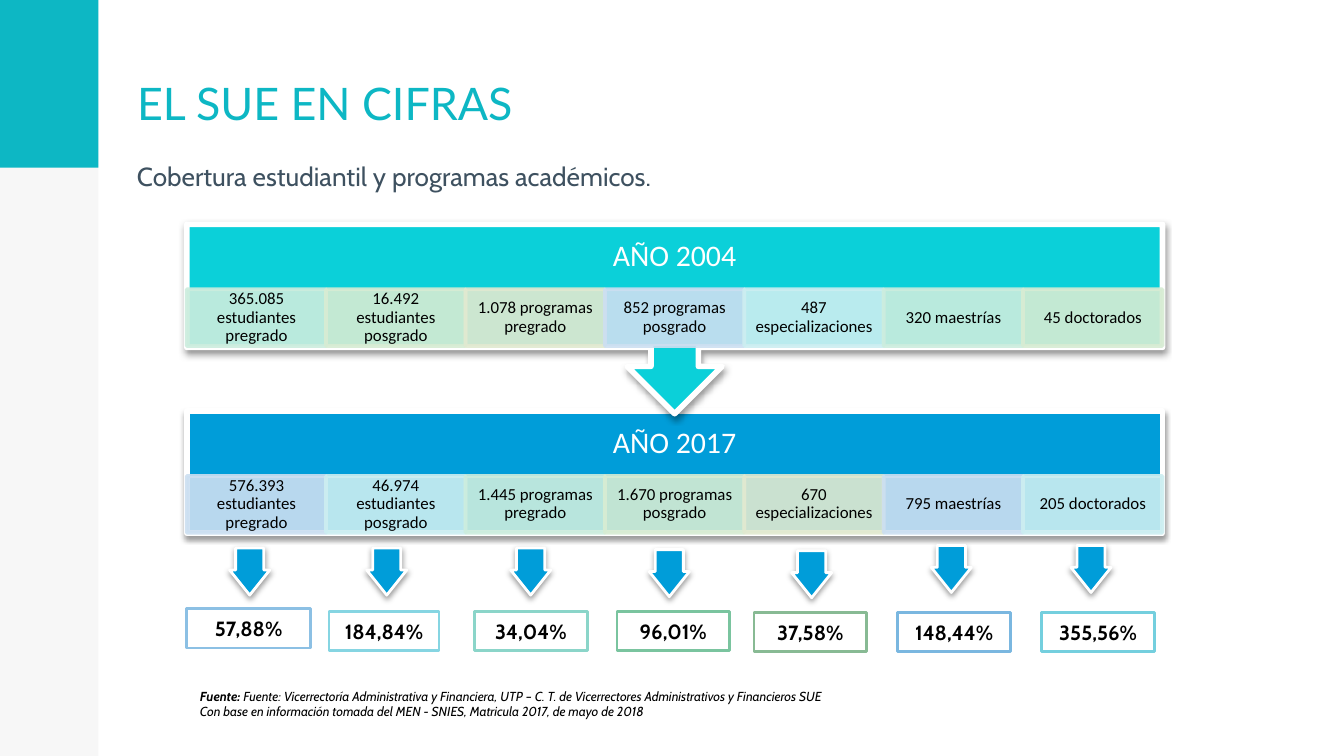
from pptx import Presentation
from pptx import util as u
from pptx.dml import color
from pptx.enum import shapes, text
from pptx.oxml import ns
from lxml import etree

RGB = color.RGBColor
TEAL = RGB(0x0D, 0xB7, 0xC4)
AQUA = RGB(0x0B, 0xD0, 0xD9)
BLUE = RGB(0x00, 0x9D, 0xD9)
SLATE = RGB(0x3E, 0x51, 0x60)
PALE_GREY = RGB(0xF7, 0xF7, 0xF7)
WHITE = RGB(0xFF, 0xFF, 0xFF)
BLACK = RGB(0x00, 0x00, 0x00)
SKY = RGB(0xCC, 0xDF, 0xF1)
ICE = RGB(0xCC, 0xEE, 0xF1)
MINT = RGB(0xCC, 0xED, 0xDE)
LEAF = RGB(0xD7, 0xEC, 0xD3)
OLIVE = RGB(0xE1, 0xE9, 0xD0)

KIND = shapes.MSO_SHAPE
ALIGN = text.PP_ALIGN
ANCHOR = text.MSO_ANCHOR

CELLS_2004 = [
    ("365.085 estudiantes pregrado", MINT),
    ("16.492 estudiantes posgrado", LEAF),
    ("1.078 programas pregrado", OLIVE),
    ("852 programas posgrado", SKY),
    ("487 especializaciones", ICE),
    ("320 maestrías", MINT),
    ("45 doctorados", LEAF),
]
CELLS_2017 = [
    ("576.393 estudiantes pregrado", SKY),
    ("46.974 estudiantes posgrado", ICE),
    ("1.445 programas pregrado", MINT),
    ("1.670 programas posgrado", LEAF),
    ("670 especializaciones", OLIVE),
    ("795 maestrías", SKY),
    ("205 doctorados", ICE),
]
GROWTH = [
    ("57,88%", RGB(0x8C, 0xC0, 0xE4), (3.53, 11.51, 2.34), (4.34, 10.36)),
    ("184,84%", RGB(0x86, 0xD5, 0xE2), (6.22, 11.56, 2.08), (6.93, 10.36)),
    ("34,04%", RGB(0x8B, 0xD5, 0xC9), (8.97, 11.56, 2.13), (9.65, 10.36)),
    ("96,01%", RGB(0x7A, 0xC4, 0x9F), (11.66, 11.56, 2.13), (12.27, 10.39)),
    ("37,58%", RGB(0x88, 0xBA, 0x94), (14.25, 11.58, 2.13), (14.96, 10.41)),
    ("148,44%", RGB(0x7A, 0xB7, 0xE0), (16.97, 11.58, 2.13), (17.6, 10.31)),
    ("355,56%", RGB(0x74, 0xCF, 0xDE), (19.69, 11.58, 2.13), (20.24, 10.31)),
]


def lengths(box):
    return [u.Cm(value) for value in box]


def add_span(para, words, font, size, colour, bold=False, italic=False):
    span = para.add_run()
    span.text = words
    span.font.name = font
    span.font.size = u.Pt(size)
    span.font.color.rgb = colour
    span.font.bold = bold
    span.font.italic = italic


def set_frame(shape, side, edge, anchor):
    frame = shape.text_frame
    frame.word_wrap = True
    frame.auto_size = text.MSO_AUTO_SIZE.NONE
    frame.margin_left = frame.margin_right = u.Cm(side)
    frame.margin_top = frame.margin_bottom = u.Cm(edge)
    frame.vertical_anchor = anchor
    return frame


def add_text_box(page, box, side=0.25, edge=0.13, anchor=ANCHOR.TOP):
    return set_frame(page.shapes.add_textbox(*lengths(box)), side, edge, anchor)


def add_block(page, kind, box, fill=None, line=None, weight=1.5):
    block = page.shapes.add_shape(kind, *lengths(box))
    block.shadow.inherit = False
    if fill is None:
        block.fill.background()
    else:
        block.fill.solid()
        block.fill.fore_color.rgb = fill
    if line is None:
        block.line.fill.background()
    else:
        block.line.color.rgb = line
        block.line.width = u.Pt(weight)
    return block


def add_shadow(block):
    effects = block.element.spPr.find(ns.qn("a:effectLst"))
    shadow = etree.SubElement(
        effects, ns.qn("a:outerShdw"), blurRad=str(u.Pt(3.1)),
        dist=str(u.Pt(1.6)), dir="5400000", rotWithShape="0")
    tint = etree.SubElement(shadow, ns.qn("a:srgbClr"), val=str(BLACK))
    etree.SubElement(tint, ns.qn("a:alpha"), val="38000")


def make_translucent(block, percent):
    for tint in block.element.spPr.iter(ns.qn("a:srgbClr")):
        etree.SubElement(tint, ns.qn("a:alpha"), val=str(percent * 1000))


def add_sidebar(page, box):
    left, top, width, height = box
    add_block(page, KIND.RECTANGLE, box, PALE_GREY)
    add_block(page, KIND.RECTANGLE, (left, top, width, 3.17), TEAL)


def add_headings(page, box):
    left, top, width, height = box
    title = page.shapes.title
    title.left, title.top, title.width, title.height = lengths((left, top, width, 2.67))
    para = set_frame(title, 0.25, 0.25, ANCHOR.BOTTOM).paragraphs[0]
    para.alignment = ALIGN.LEFT
    add_span(para, "EL SUE EN CIFRAS", "Lato", 24, TEAL)
    para = add_text_box(page, (left, top + 2.87, width, height - 2.87)).paragraphs[0]
    para.alignment = ALIGN.JUSTIFY
    add_span(para, "Cobertura estudiantil y programas académicos.", "Cabin", 14, SLATE)


def add_year(page, box, kind, colour, heading, cells):
    left, top, width, height = box
    panel = add_block(page, kind, box, colour, WHITE, 3)
    add_shadow(panel)
    if kind == KIND.UP_ARROW_CALLOUT:
        panel.rotation = 180
    para = add_text_box(page, (left, top, width, 1.24), 0.3, 0.3, ANCHOR.MIDDLE).paragraphs[0]
    para.alignment = ALIGN.CENTER
    para.line_spacing = 0.9
    add_span(para, heading, "Calibri", 16, WHITE)
    step = width / len(cells)
    for index, (words, tint) in enumerate(cells):
        cell = add_block(page, KIND.RECTANGLE,
                         (left + index * step, top + 1.23, step, 1.07), tint, tint, 2)
        make_translucent(cell, 90)
        para = set_frame(cell, 0.18, 0.03, ANCHOR.MIDDLE).paragraphs[0]
        para.alignment = ALIGN.CENTER
        para.line_spacing = 0.9
        add_span(para, words, "Calibri", 9, BLACK)


def add_growth(page, box, arrow_place, words, colour):
    arrow = add_block(page, KIND.DOWN_ARROW, (*arrow_place, 0.76, 0.89), BLUE, WHITE)
    arrow.adjustments[0] = 0.7
    arrow.adjustments[1] = 0.625
    add_shadow(arrow)
    frame = add_block(page, KIND.RECTANGLE, box, line=colour)
    para = set_frame(frame, 0.1, 0, ANCHOR.MIDDLE).paragraphs[0]
    para.alignment = ALIGN.CENTER
    add_span(para, words, "Cabin", 11, BLACK, bold=True)


def add_source(page, box):
    frame = add_text_box(page, box)
    para = frame.paragraphs[0]
    add_span(para, "Fuente: ", "Cabin", 7, BLACK, bold=True, italic=True)
    add_span(para, "Fuente: Vicerrectoría Administrativa y Financiera, UTP – C. T. de "
             "Vicerrectores Administrativos y Financieros SUE", "Cabin", 7, BLACK, italic=True)
    add_span(frame.add_paragraph(), "Con base en información tomada del MEN - SNIES, "
             "Matricula 2017, de mayo de 2018", "Cabin", 7, BLACK, italic=True)


def main():
    deck = Presentation()
    deck.slide_width, deck.slide_height = lengths((25.4, 14.29))
    page = deck.slides.add_slide(deck.slide_layouts.get_by_name("Title Only"))
    add_sidebar(page, (0, 0, 1.86, 14.29))
    add_headings(page, (2.34, 0.03, 12.6, 3.73))
    add_year(page, (3.53, 7.77, 18.44, 2.31), KIND.RECTANGLE, BLUE, "AÑO 2017", CELLS_2017)
    add_year(page, (3.53, 4.24, 18.44, 3.58), KIND.UP_ARROW_CALLOUT, AQUA,
             "AÑO 2004", CELLS_2004)
    for words, colour, place, arrow_place in GROWTH:
        add_growth(page, (*place, 0.74), arrow_place, words, colour)
    add_source(page, (3.53, 12.88, 12.7, 0.86))
    deck.save("out.pptx")


if __name__ == "__main__":
    main()
